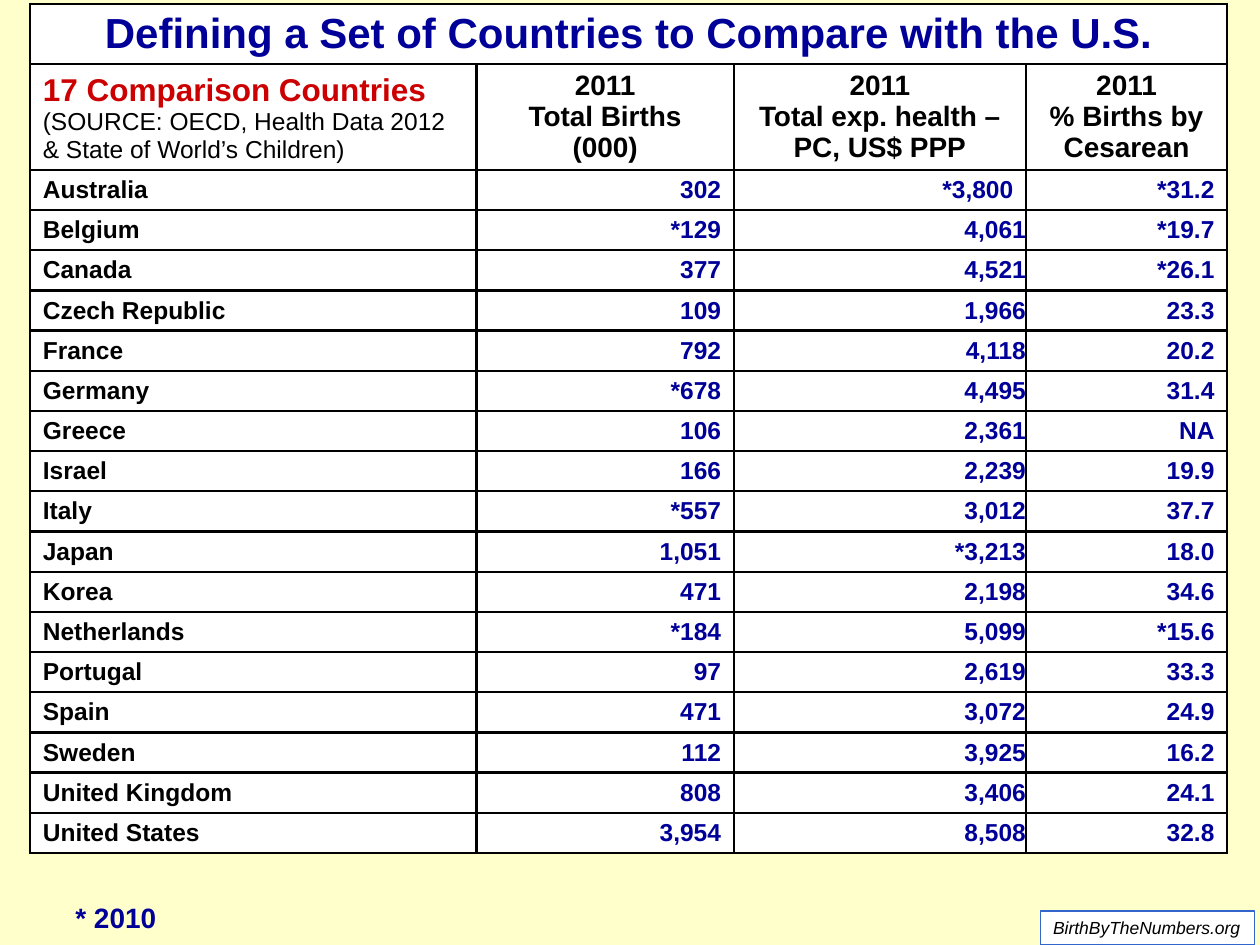
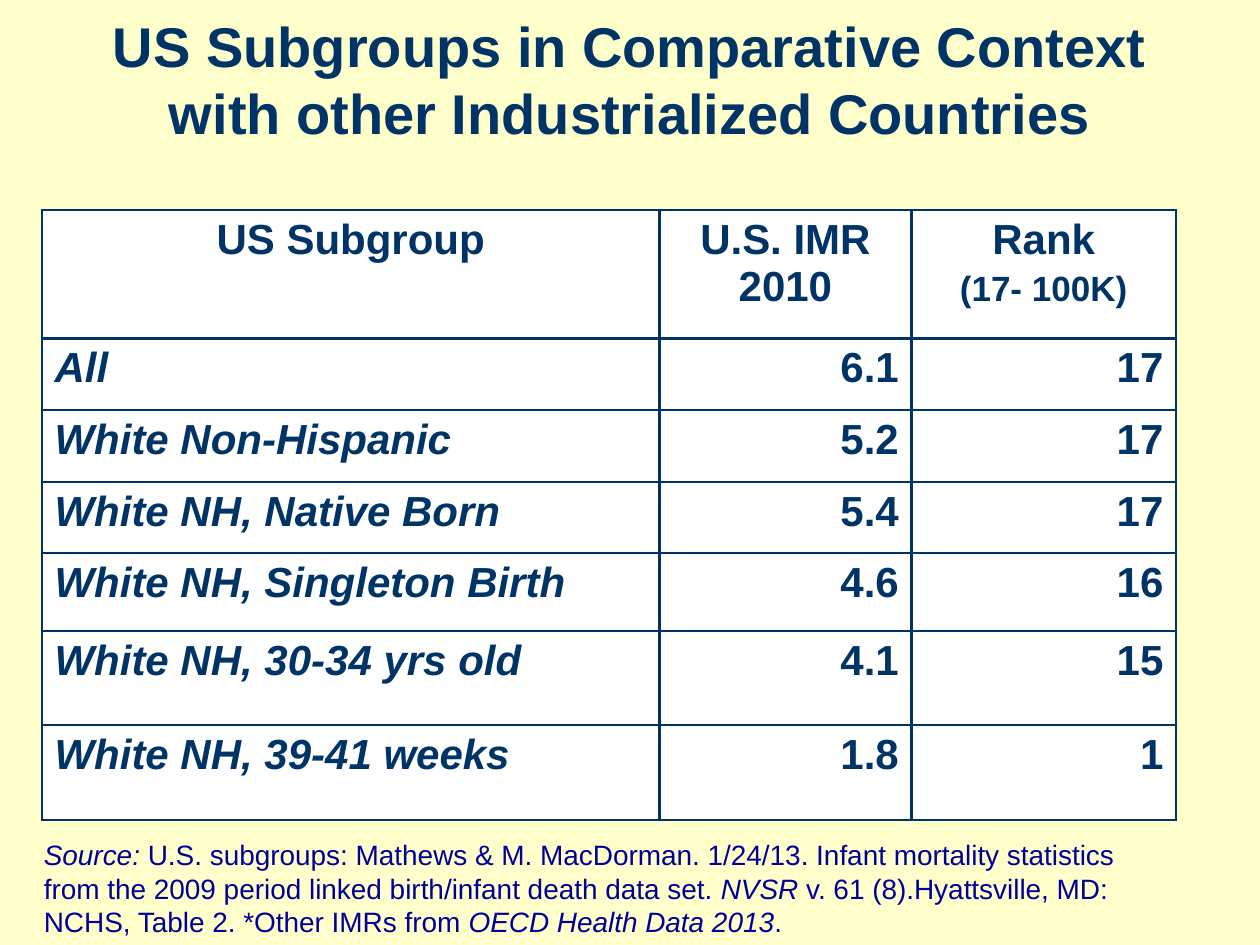
from pptx import Presentation
from pptx.dml.color import RGBColor
from pptx.enum.shapes import MSO_SHAPE
from pptx.enum.text import MSO_ANCHOR as ANCHOR, MSO_AUTO_SIZE as AUTO, PP_ALIGN as ALIGN
from pptx.oxml import parse_xml
from pptx.oxml.ns import nsdecls
from pptx.util import Pt

CREAM = RGBColor(0xFF, 0xFF, 0xCC)
WHITE = RGBColor(0xFF, 0xFF, 0xFF)
BLACK = RGBColor(0x00, 0x00, 0x00)
RED = RGBColor(0xCC, 0x00, 0x00)
BLUE = RGBColor(0x00, 0x00, 0x99)
NAVY = RGBColor(0x00, 0x33, 0x66)
FRAME_BLUE = RGBColor(0x33, 0x66, 0xCC)
FONT = "Arial"
BORDER = 1.5


def write(frame, text, *, size, color, bold=False, italic=False,
          align=ALIGN.LEFT, space_before=0, same_line=False):
    """Add a paragraph, or continue the last one; a newline is a line break."""
    paragraph = frame.paragraphs[-1]
    if paragraph.runs and not same_line:
        paragraph = frame.add_paragraph()
    paragraph.alignment = align
    paragraph.space_before = Pt(space_before)
    for number, line in enumerate(text.split("\n")):
        if number:
            paragraph.add_line_break()
        run = paragraph.add_run()
        run.text = line
        font = run.font
        font.name, font.size, font.bold, font.italic = FONT, Pt(size), bold, italic
        font.color.rgb = color


def add_grid(slide, left, top, widths, heights, line_color):
    """Add a white table with borders on every cell."""
    grid = slide.shapes.add_table(len(heights), len(widths), Pt(left), Pt(top),
                                  Pt(sum(widths)), Pt(sum(heights))).table
    grid.first_row = grid.horz_banding = False
    for column, width in zip(grid.columns, widths):
        column.width = Pt(width)
    for row, height in zip(grid.rows, heights):
        row.height = Pt(height)
    for cell in grid.iter_cells():
        cell.fill.solid()
        cell.fill.fore_color.rgb = WHITE
        properties = cell._tc.get_or_add_tcPr()
        for place, side in enumerate("LRTB"):
            properties.insert(place, parse_xml(
                f'<a:ln{side} {nsdecls("a")} w="{Pt(BORDER)}"><a:solidFill>'
                f'<a:srgbClr val="{line_color}"/></a:solidFill></a:ln{side}>'))
    return grid


prs = Presentation()
prs.slide_width, prs.slide_height = Pt(720), Pt(540)
backdrop = prs.slide_master.background.fill
backdrop.solid()
backdrop.fore_color.rgb = CREAM
title_only, blank = prs.slide_layouts[5], prs.slide_layouts[6]

# Slide 1: comparison countries
countries = [
    ("Australia", "302", "*3,800", "*31.2"),
    ("Belgium", "*129", "4,061", "*19.7"),
    ("Canada", "377", "4,521", "*26.1"),
    ("Czech Republic", "109", "1,966", "23.3"),
    ("France", "792", "4,118", "20.2"),
    ("Germany", "*678", "4,495", "31.4"),
    ("Greece", "106", "2,361", "NA"),
    ("Israel", "166", "2,239", "19.9"),
    ("Italy", "*557", "3,012", "37.7"),
    ("Japan", "1,051", "*3,213", "18.0"),
    ("Korea", "471", "2,198", "34.6"),
    ("Netherlands", "*184", "5,099", "*15.6"),
    ("Portugal", "97", "2,619", "33.3"),
    ("Spain", "471", "3,072", "24.9"),
    ("Sweden", "112", "3,925", "16.2"),
    ("United Kingdom", "808", "3,406", "24.1"),
    ("United States", "3,954", "8,508", "32.8"),
]
measures = [
    ("2011", "Total Births", "(000)"),
    ("2011", "Total exp. health – PC, US$ PPP"),
    ("2011", "% Births by Cesarean"),
]
slide = prs.slides.add_slide(blank)
comparison = add_grid(slide, 17.3, 2.2, [255, 147, 167, 115],
                      [34.3, 60.6] + [22.95] * len(countries), BLACK)

# Heading rows
heading = comparison.cell(0, 0)
heading.merge(comparison.cell(0, 3))
heading.vertical_anchor = ANCHOR.BOTTOM
write(heading.text_frame, "Defining a Set of Countries to Compare with the U.S.",
      size=24, color=BLUE, bold=True, align=ALIGN.CENTER)
group = comparison.cell(1, 0)
group.vertical_anchor = ANCHOR.BOTTOM
write(group.text_frame, "17 Comparison Countries", size=18, color=RED, bold=True)
write(group.text_frame, "(SOURCE: OECD, Health Data 2012 & State of World’s Children)",
      size=14, color=BLACK)
for col, lines in enumerate(measures, start=1):
    measure = comparison.cell(1, col)
    measure.vertical_anchor = ANCHOR.BOTTOM
    for line in lines:
        write(measure.text_frame, line, size=16, color=BLACK, bold=True, align=ALIGN.CENTER)

# Country rows
for row, values in enumerate(countries, start=2):
    for col, value in enumerate(values):
        cell = comparison.cell(row, col)
        cell.vertical_anchor = ANCHOR.MIDDLE
        if col == 2 and row > 2:
            cell.margin_left = cell.margin_right = cell.margin_top = cell.margin_bottom = 0
        write(cell.text_frame, value, size=14, bold=True,
              color=BLUE if col else BLACK, align=ALIGN.RIGHT if col else ALIGN.LEFT)

# Site label and year note
site = slide.shapes.add_shape(MSO_SHAPE.RECTANGLE, Pt(594.7), Pt(520.6), Pt(122.4), Pt(19.4))
site.shadow.inherit = False
site.fill.solid()
site.fill.fore_color.rgb = WHITE
site.line.color.rgb = FRAME_BLUE
site.line.width = Pt(0.75)
site.text_frame.word_wrap = False
write(site.text_frame, "BirthByTheNumbers.org", size=10, color=BLACK, italic=True)
year_note = slide.shapes.add_textbox(Pt(36), Pt(511.2), Pt(61.2), Pt(26.6))
year_note.text_frame.word_wrap = False
write(year_note.text_frame, "* 2010", size=16, color=BLUE, bold=True)

# Slide 2: US subgroups
slide = prs.slides.add_slide(title_only)
title = slide.shapes.title
title.left, title.top, title.width, title.height = 0, 0, Pt(720), Pt(90)
title.fill.solid()
title.fill.fore_color.rgb = CREAM
title.text_frame.auto_size = AUTO.NONE
title.text_frame.vertical_anchor = ANCHOR.MIDDLE
write(title.text_frame,
      "US Subgroups in Comparative Context\nwith other Industrialized Countries",
      size=32, color=NAVY, bold=True, align=ALIGN.CENTER)

subgroup_rows = [
    ("US Subgroup", "U.S. IMR 2010", "Rank"),
    ("All", "6.1", "17"),
    ("White Non-Hispanic", "5.2", "17"),
    ("White NH, Native Born", "5.4", "17"),
    ("White NH, Singleton Birth", "4.6", "16"),
    ("White NH, 30-34 yrs old", "4.1", "15"),
    ("White NH, 39-41 weeks", "1.8", "1"),
]
subgroups = add_grid(slide, 24, 120, [352.8, 144, 151.2],
                     [73.4, 41, 41, 40.5, 44.6, 54, 54], NAVY)
for row, values in enumerate(subgroup_rows):
    for col, value in enumerate(values):
        align = ALIGN.CENTER if row == 0 else ALIGN.RIGHT if col else ALIGN.LEFT
        write(subgroups.cell(row, col).text_frame, value, size=24, color=NAVY,
              bold=True, italic=row > 0 and col == 0, align=align)
write(subgroups.cell(0, 2).text_frame, "(17- 100K)", size=20, color=NAVY,
      bold=True, align=ALIGN.CENTER, space_before=4)

# Source note, alternating italic and upright
source = slide.shapes.add_textbox(Pt(18), Pt(475.2), Pt(655.2), Pt(64.8)).text_frame
source.word_wrap = True
citation = [
    "Source:",
    " U.S. subgroups: Mathews & M. MacDorman. 1/24/13. Infant mortality statistics from "
    "the 2009 period linked birth/infant death data set. ",
    "NVSR",
    " v. 61 (8).Hyattsville, MD: NCHS, Table 2. *Other IMRs from ",
    "OECD Health Data 2013",
    ".",
]
for number, part in enumerate(citation):
    write(source, part, size=16, color=BLUE, italic=number % 2 == 0, same_line=True)

prs.save("out.pptx")
